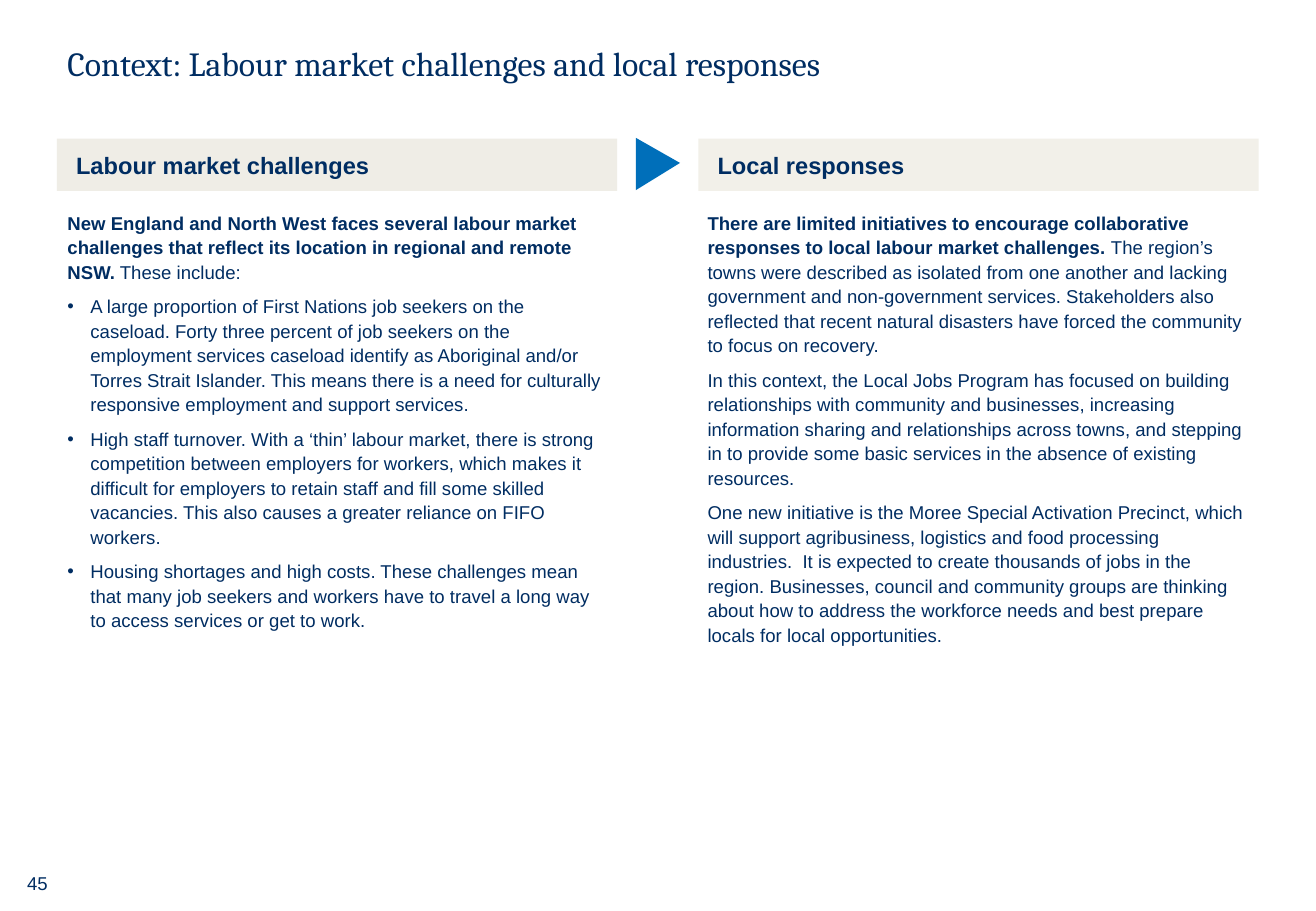
"""Build the slide on labour market challenges and local responses."""
from dataclasses import dataclass
from typing import Any

from lxml import etree
from pptx import Presentation
from pptx import util as u
from pptx.dml.color import RGBColor
from pptx.enum import shapes, text
from pptx.oxml import ns

NAVY = RGBColor(0x00, 0x2D, 0x62)
BLUE = RGBColor(0x00, 0x6F, 0xBA)
SAND = RGBColor(0xEF, 0xED, 0xE6)
PALE_SAND = RGBColor(0xF2, 0xF0, 0xE9)

COLUMN_WIDTH = 11.71
HEADING_TOP, HEADING_HEIGHT = 2.9, 1.09
BODY_TOP = 4.19
INSET, HEADING_INSET = 0.19, 0.4
BULLET_INDENT = 0.48

TITLE_FONT = {"name": "Cambria", "size": u.Pt(20), "bold": False}
HEADING_FONT = {"name": "Arial", "size": u.Pt(14), "bold": True}
BODY_FONT = {"name": "Arial", "size": u.Pt(11), "bold": False}
LEAD_FONT = {**BODY_FONT, "bold": True}
PLAIN = {"space_before": u.Pt(0), "alignment": text.PP_ALIGN.LEFT}
PROSE = {**PLAIN, "space_after": u.Pt(6), "line_spacing": 1.1}


@dataclass(frozen=True)
class Passage:
    """A paragraph with an optional bold opening."""

    words: str
    lead: str = ""
    bulleted: bool = False


@dataclass(frozen=True)
class Column:
    """A heading bar above its passages."""

    heading: str
    heading_left: float
    body_left: float
    body_height: float
    fill: RGBColor
    passages: tuple[Passage, ...]


COLUMNS = (
    Column("Labour market challenges", 1.19, 1.22, 8.71, SAND, (
        Passage(" These include:",
                lead="New England and North West faces several labour market challenges that "
                     "reflect its location in regional and remote NSW."),
        Passage("A large proportion of First Nations job seekers on the caseload. Forty three "
                "percent of job seekers on the employment services caseload identify as "
                "Aboriginal and/or Torres Strait Islander. This means there is a need for "
                "culturally responsive employment and support services.", bulleted=True),
        Passage("High staff turnover. With a ‘thin’ labour market, there is strong competition "
                "between employers for workers, which makes it difficult for employers to retain "
                "staff and fill some skilled vacancies. This also causes a greater reliance on "
                "FIFO workers.", bulleted=True),
        Passage("Housing shortages and high costs. These challenges mean that many job seekers "
                "and workers have to travel a long way to access services or get to work.",
                bulleted=True),
    )),
    Column("Local responses", 14.6, 14.6, 10.01, PALE_SAND, (
        Passage(" The region’s towns were described as isolated from one another and lacking "
                "government and non-government services. Stakeholders also reflected that recent "
                "natural disasters have forced the community to focus on recovery.",
                lead="There are limited initiatives to encourage collaborative responses to "
                     "local labour market challenges."),
        Passage("In this context, the Local Jobs Program has focused on building relationships "
                "with community and businesses, increasing information sharing and relationships "
                "across towns, and stepping in to provide some basic services in the absence of "
                "existing resources."),
        Passage("One new initiative is the Moree Special Activation Precinct, which will support "
                "agribusiness, logistics and food processing industries.  It is expected to "
                "create thousands of jobs in the region. Businesses, council and community groups "
                "are thinking about how to address the workforce needs and best prepare locals "
                "for local opportunities."),
    )),
)


def apply_format(target: Any, values: dict[str, Any]) -> None:
    """Set each named attribute on the target."""
    for attribute, value in values.items():
        setattr(target, attribute, value)


def place(holder: Any, left: float, top: float, width: float, height: float) -> None:
    """Move and size a shape in centimetres."""
    apply_format(holder, {"left": u.Cm(left), "top": u.Cm(top),
                          "width": u.Cm(width), "height": u.Cm(height)})


def set_frame(frame: Any, side: float, edge: float, anchor: Any) -> None:
    """Set the margins, anchor and wrapping of a text frame."""
    apply_format(frame, {
        "margin_left": u.Cm(side), "margin_right": u.Cm(side),
        "margin_top": u.Cm(edge), "margin_bottom": u.Cm(edge),
        "vertical_anchor": anchor, "word_wrap": True,
        "auto_size": text.MSO_AUTO_SIZE.NONE,
    })


def set_bullet(paragraph: Any, bulleted: bool) -> None:
    """Give the paragraph a hanging bullet, or clear the inherited one."""
    properties = paragraph._p.get_or_add_pPr()
    indent = u.Cm(BULLET_INDENT) if bulleted else 0
    properties.set("marL", str(indent))
    properties.set("indent", str(-indent))
    if not bulleted:
        etree.SubElement(properties, ns.qn("a:buNone"))
        return
    tint = etree.SubElement(properties, ns.qn("a:buClr"))
    etree.SubElement(tint, ns.qn("a:srgbClr")).set("val", str(NAVY))
    etree.SubElement(properties, ns.qn("a:buFont")).set("typeface", "Arial")
    etree.SubElement(properties, ns.qn("a:buChar")).set("char", "•")


def add_words(paragraph: Any, words: str, font: dict[str, Any]) -> None:
    """Add one formatted run to the paragraph."""
    run = paragraph.add_run()
    run.text = words
    apply_format(run.font, font)
    run.font.color.rgb = NAVY


def write_line(frame: Any, words: str, font: dict[str, Any], layout: dict[str, Any]) -> None:
    """Write a single unbulleted line."""
    line = frame.paragraphs[0]
    set_bullet(line, False)
    apply_format(line, layout)
    add_words(line, words, font)


def write_passages(frame: Any, passages: tuple[Passage, ...]) -> None:
    """Write the passages one after another."""
    for position, passage in enumerate(passages):
        paragraph = frame.add_paragraph() if position else frame.paragraphs[0]
        set_bullet(paragraph, passage.bulleted)
        apply_format(paragraph, PROSE)
        if passage.lead:
            add_words(paragraph, passage.lead, LEAD_FONT)
        add_words(paragraph, passage.words, BODY_FONT)


def draw_column(column: Column, heading: Any, body: Any) -> None:
    """Fill a heading and a body placeholder from a column."""
    place(heading, column.heading_left, HEADING_TOP, COLUMN_WIDTH, HEADING_HEIGHT)
    heading.fill.solid()
    heading.fill.fore_color.rgb = column.fill
    set_frame(heading.text_frame, HEADING_INSET, INSET, text.MSO_ANCHOR.MIDDLE)
    write_line(heading.text_frame, column.heading, HEADING_FONT, PLAIN)

    place(body, column.body_left, BODY_TOP, COLUMN_WIDTH, column.body_height)
    set_frame(body.text_frame, INSET, INSET, text.MSO_ANCHOR.TOP)
    write_passages(body.text_frame, column.passages)


def draw_pointer(slide: Any) -> None:
    """Draw the triangle that points from challenges to responses."""
    pointer = slide.shapes.add_shape(shapes.MSO_SHAPE.ISOSCELES_TRIANGLE,
                                     u.Cm(13.21), u.Cm(2.97), u.Cm(1.09), u.Cm(0.92))
    pointer.rotation = 90
    pointer.adjustments[0] = 0.48
    pointer.shadow.inherit = False
    pointer.fill.solid()
    pointer.fill.fore_color.rgb = BLUE
    pointer.line.fill.background()


def main() -> None:
    """Build and save the presentation."""
    deck = Presentation()
    apply_format(deck, {"slide_width": u.Cm(27.51), "slide_height": u.Cm(19.05)})
    slide = deck.slides.add_slide(deck.slide_layouts.get_by_name("Comparison"))
    title, *holders = slide.placeholders

    place(title, 1.22, 0.46, 25.15, 1.7)
    set_frame(title.text_frame, INSET, INSET, text.MSO_ANCHOR.MIDDLE)
    write_line(title.text_frame, "Context: Labour market challenges and local responses",
               TITLE_FONT, PLAIN)

    for column, heading, body in zip(COLUMNS, holders[::2], holders[1::2]):
        draw_column(column, heading, body)
    draw_pointer(slide)

    page_number = slide.shapes.add_textbox(u.Cm(0.2), u.Cm(18.24), u.Cm(0.91), u.Cm(0.53))
    set_frame(page_number.text_frame, 0, 0, text.MSO_ANCHOR.TOP)
    write_line(page_number.text_frame, "45 ", BODY_FONT,
               {**PLAIN, "alignment": text.PP_ALIGN.RIGHT})
    deck.save("out.pptx")


if __name__ == "__main__":
    main()
